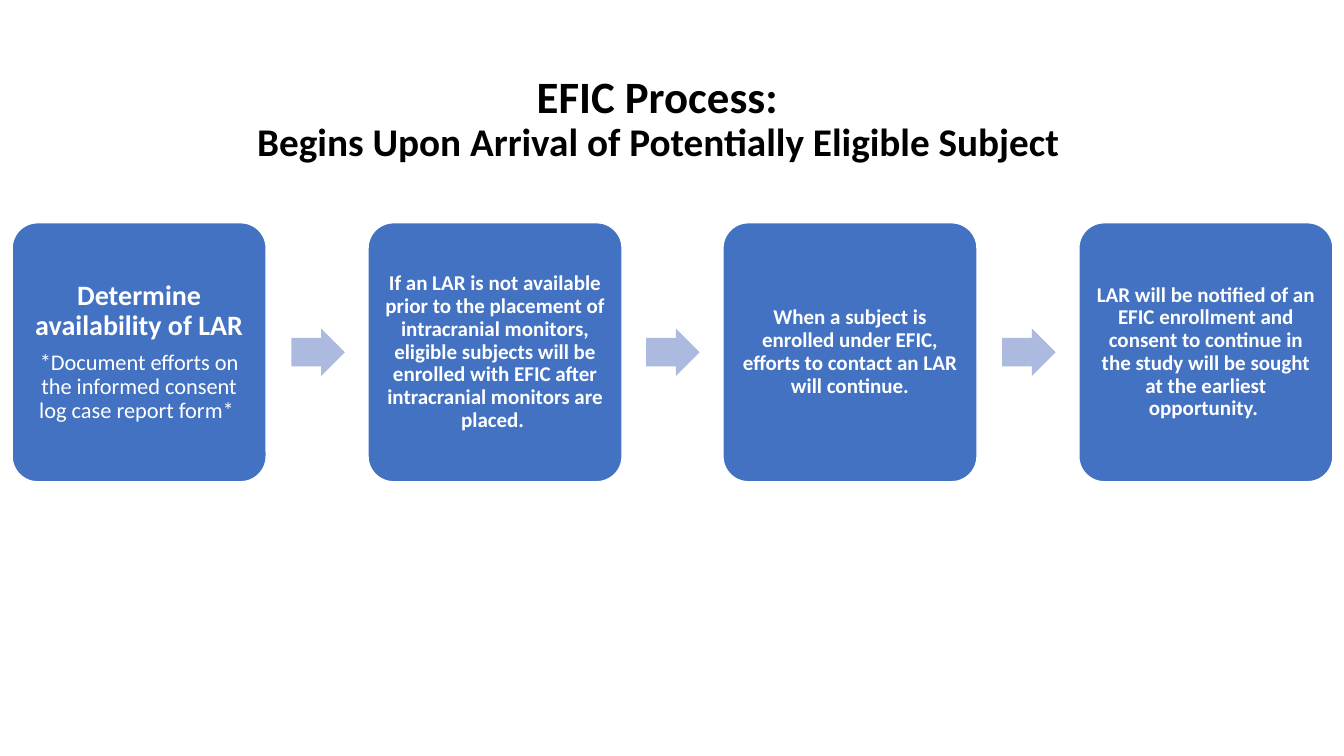
from pptx import Presentation
from pptx.dml.color import RGBColor
from pptx.enum.shapes import MSO_SHAPE
from pptx.enum.text import MSO_ANCHOR, MSO_AUTO_SIZE, PP_ALIGN
from pptx.util import Pt

PX = 9144  # EMU per px, 100 px to the inch
FONT = "Calibri"
WHITE, BLACK, BLUE, PALE_BLUE = "FFFFFF", "000000", "4372C3", "ABBADE"

# Each step is a list of paragraphs: text, size, bold
STEPS = [
    [("Determine availability of LAR", 20, True),
     ("*Document efforts on the informed consent log case report form* ", 16, False)],
    [("If an LAR is not available prior to the placement of intracranial monitors, "
      "eligible subjects will be enrolled with EFIC after intracranial monitors are placed. ",
      15, True)],
    [("When a subject is enrolled under EFIC, efforts to contact an LAR will continue.",
      15, True)],
    [("LAR will be notified of an EFIC enrollment and consent to continue in the study "
      "will be sought at the earliest opportunity. ", 15, True)],
]


def color(value):
    return RGBColor.from_string(value)


def px(*lengths):
    return [length * PX for length in lengths]


def add_text(para, text, size=15, bold=True, fill=WHITE):
    para.alignment = PP_ALIGN.CENTER
    para.line_spacing = 0.9
    span = para.add_run()
    span.text = text
    span.font.name = FONT
    span.font.size = Pt(size)
    span.font.bold = bold
    span.font.color.rgb = color(fill)


def set_frame(frame, anchor, horizontal, vertical):
    frame.word_wrap = True
    frame.auto_size = MSO_AUTO_SIZE.NONE
    frame.vertical_anchor = anchor
    frame.margin_left = frame.margin_right = horizontal * PX
    frame.margin_top = frame.margin_bottom = vertical * PX


def add_block(page, kind, box, fill, adjustments):
    block = page.shapes.add_shape(kind, *px(*box))
    block.shadow.inherit = False
    block.fill.solid()
    block.fill.fore_color.rgb = color(fill)
    block.line.fill.background()
    for index, value in enumerate(adjustments):
        block.adjustments[index] = value
    return block


def add_title(page, box):
    title = page.shapes.title
    title.left, title.top, title.width, title.height = px(*box)
    title.fill.solid()
    title.fill.fore_color.rgb = color(WHITE)
    set_frame(title.text_frame, MSO_ANCHOR.BOTTOM, 10, 5)
    para = title.text_frame.paragraphs[0]
    add_text(para, "EFIC Process: ", size=32, fill=BLACK)
    para.add_line_break()
    add_text(para, "Begins Upon Arrival of Potentially Eligible Subject ", size=28, fill=BLACK)


def add_step(page, box, paragraphs):
    card = add_block(page, MSO_SHAPE.ROUNDED_RECTANGLE, box, BLUE, [0.1])
    card.line.color.rgb = color(WHITE)
    card.line.width = Pt(1)
    frame = card.text_frame
    inset = 8 if len(paragraphs) > 1 else 6
    set_frame(frame, MSO_ANCHOR.MIDDLE, inset, inset)
    for index, (text, size, bold) in enumerate(paragraphs):
        para = frame.add_paragraph() if index else frame.paragraphs[0]
        if index:
            para.space_before = Pt(7)
        add_text(para, text, size=size, bold=bold)


def add_process(page, box):
    left, top, width, height = box
    card_width, arrow_width, arrow_height = 252, 53, 47
    pitch = (width - card_width) / (len(STEPS) - 1)
    for index, paragraphs in enumerate(STEPS):
        card_left = round(left + index * pitch)
        # Arrow from the previous card
        if index:
            arrow_box = (card_left - 23 - arrow_width, top + (height - arrow_height) // 2,
                         arrow_width, arrow_height)
            add_block(page, MSO_SHAPE.RIGHT_ARROW, arrow_box, PALE_BLUE, [0.6, 0.5])
        add_step(page, (card_left, top, card_width, height), paragraphs)


def main():
    deck = Presentation()
    deck.slide_width, deck.slide_height = px(1333, 750)
    page = deck.slides.add_slide(deck.slide_layouts[5])
    add_title(page, (0, 25, 1314, 144))
    add_process(page, (12, 221, 1310, 257))
    deck.save("out.pptx")


if __name__ == "__main__":
    main()
